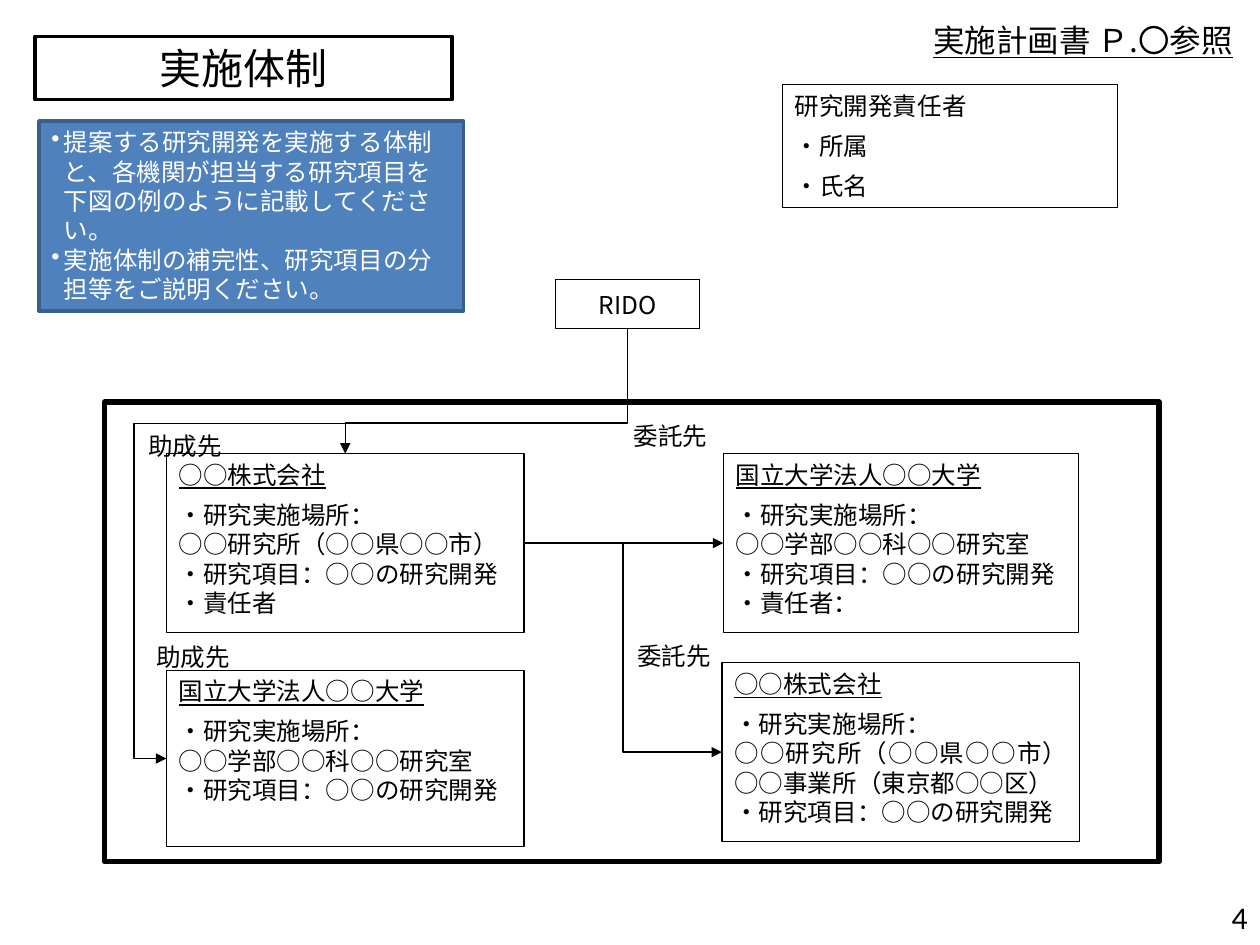
from lxml.etree import SubElement
from pptx import Presentation
from pptx.dml.color import RGBColor
from pptx.enum.shapes import MSO_CONNECTOR, MSO_SHAPE
from pptx.enum.text import MSO_ANCHOR, PP_ALIGN
from pptx.oxml.ns import qn
from pptx.util import Inches, Pt

COLORS = {"black": "000000", "white": "FFFFFF", "blue": "4F81BD", "navy": "3A5F8C"}
JAPANESE = "Noto Sans CJK JP"
TOP, LEFT, BOTTOM, RIGHT = range(4)
PLACE = "・研究実施場所："
TOPIC = "・研究項目：○○の研究開発"


def color(name):
    return RGBColor.from_string(COLORS[name])


def write(shape, lines, size=14, align=PP_ALIGN.JUSTIFY, anchor=MSO_ANCHOR.TOP,
          font=JAPANESE, ink="black", underlined=0, spaced=0, bullet=None):
    frame = shape.text_frame
    frame.word_wrap = True
    frame.vertical_anchor = anchor
    for index, line in enumerate(lines):
        paragraph = frame.paragraphs[0] if index == 0 else frame.add_paragraph()
        paragraph.text = line
        paragraph.alignment = align
        properties = paragraph._p.get_or_add_pPr()
        if bullet:
            properties.set("marL", str(Inches(0.1)))
            properties.set("indent", str(-Inches(0.1)))
            SubElement(properties, qn("a:buChar")).set("char", bullet)
        if index < spaced:
            paragraph.space_after = Pt(6)
        paragraph.font.size = Pt(size)
        paragraph.font.name = font
        paragraph.font.color.rgb = color(ink)
        paragraph.font.underline = index < underlined
        defaults = properties.find(qn("a:defRPr"))
        SubElement(defaults, qn("a:ea")).set("typeface", JAPANESE)


def add_box(slide, left, top, width, height, lines=(), fill="white", line="black",
            weight=0.75, **style):
    shape = slide.shapes.add_shape(
        MSO_SHAPE.RECTANGLE, Inches(left), Inches(top), Inches(width), Inches(height))
    shape.shadow.inherit = False
    if fill:
        shape.fill.solid()
        shape.fill.fore_color.rgb = color(fill)
    else:
        shape.fill.background()
    shape.line.color.rgb = color(line)
    shape.line.width = Pt(weight)
    write(shape, lines, **style)
    return shape


def add_label(slide, left, top, width, height, text, **style):
    label = slide.shapes.add_textbox(
        Inches(left), Inches(top), Inches(width), Inches(height))
    write(label, [text], **style)


def add_organization(slide, left, top, width, height, lines):
    return add_box(slide, left, top, width, height, lines, underlined=1, spaced=1)


def add_elbow(slide, start, start_side, end, end_side, bends=(0.5,)):
    connector = slide.shapes.add_connector(MSO_CONNECTOR.ELBOW, 0, 0, 0, 0)
    connector.begin_connect(start, start_side)
    connector.end_connect(end, end_side)
    connector.line.color.rgb = color("black")
    connector.line.width = Pt(0.75)
    SubElement(connector.get_or_add_ln(), qn("a:tailEnd")).set("type", "triangle")
    properties = connector._element.spPr
    SubElement(properties, qn("a:effectLst"))
    if start_side == BOTTOM:
        turn_down(connector)
    geometry = properties.find(qn("a:prstGeom"))
    geometry.set("prst", f"bentConnector{len(bends) + 2}")
    adjustments = geometry.find(qn("a:avLst"))
    for number, bend in enumerate(bends, 1):
        name = "adj1" if number == 1 else f"adj{number}"
        guide = SubElement(adjustments, qn("a:gd"))
        guide.set("name", name)
        guide.set("fmla", f"val {round(bend * 100000)}")


def turn_down(connector):
    width, height = connector.width, connector.height
    shift = (width - height) // 2
    connector.left += shift
    connector.top -= shift
    connector.width, connector.height = height, width
    transform = connector._element.spPr.find(qn("a:xfrm"))
    transform.attrib.pop("flipH", None)
    transform.set("rot", str(90 * 60000))


def main():
    presentation = Presentation()
    presentation.slide_width = Inches(10)
    presentation.slide_height = Inches(7.5)
    slide = presentation.slides.add_slide(presentation.slide_layouts[6])

    add_label(slide, 7.67, 7.08, 2.33, 0.4, "4", size=18, font="Calibri",
              align=PP_ALIGN.RIGHT, anchor=MSO_ANCHOR.MIDDLE)
    add_box(slide, 0.28, 0.29, 3.31, 0.5, ["実施体制"], weight=2.25, size=24,
            align=PP_ALIGN.CENTER)
    add_label(slide, 6.89, 0.12, 2.99, 0.4, "実施計画書 Ｐ.〇参照", size=18,
              align=PP_ALIGN.RIGHT, underlined=1)
    add_box(slide, 0.31, 0.96, 3.37, 1.51, [
        "提案する研究開発を実施する体制と、各機関が担当する研究項目を下図の例のように記載してください。",
        "実施体制の補完性、研究項目の分担等をご説明ください。",
    ], fill="blue", line="navy", weight=2, align=PP_ALIGN.LEFT, font="Calibri",
        ink="white", bullet="•")
    add_box(slide, 6.21, 0.67, 2.66, 0.98, ["研究開発責任者", "・所属", "・氏名"], spaced=3)

    add_box(slide, 0.83, 3.19, 8.37, 3.65, fill=None, weight=3)
    agency = add_box(slide, 4.41, 2.22, 1.14, 0.39, ["RIDO"],
                     align=PP_ALIGN.CENTER, anchor=MSO_ANCHOR.MIDDLE)
    lead_company = add_organization(slide, 1.32, 3.6, 2.84, 1.42, [
        "○○株式会社", PLACE, "○○研究所（○○県○○市）", TOPIC, "・責任者"])
    lead_university = add_organization(slide, 1.32, 5.32, 2.84, 1.4, [
        "国立大学法人○○大学", PLACE, "○○学部○○科○○研究室", TOPIC])
    partner_university = add_organization(slide, 5.74, 3.6, 2.82, 1.42, [
        "国立大学法人○○大学", PLACE, "○○学部○○科○○研究室", TOPIC, "・責任者："])
    partner_company = add_organization(slide, 5.73, 5.26, 2.84, 1.42, [
        "○○株式会社", PLACE, "○○研究所（○○県○○市）○○事業所（東京都○○区）", TOPIC])

    add_label(slide, 1.08, 3.37, 1.14, 0.45, "助成先")
    add_label(slide, 1.14, 5.05, 1.59, 0.2, "助成先")
    add_label(slide, 4.93, 3.29, 0.88, 0.29, "委託先")
    add_label(slide, 4.96, 5.04, 0.88, 0.29, "委託先")

    add_elbow(slide, lead_company, RIGHT, partner_university, LEFT)
    add_elbow(slide, lead_company, RIGHT, partner_company, LEFT)
    add_elbow(slide, agency, BOTTOM, lead_company, TOP, bends=(0.75,))
    add_elbow(slide, agency, BOTTOM, lead_university, LEFT, bends=(0.22, 1.07))

    presentation.save("out.pptx")


if __name__ == "__main__":
    main()
